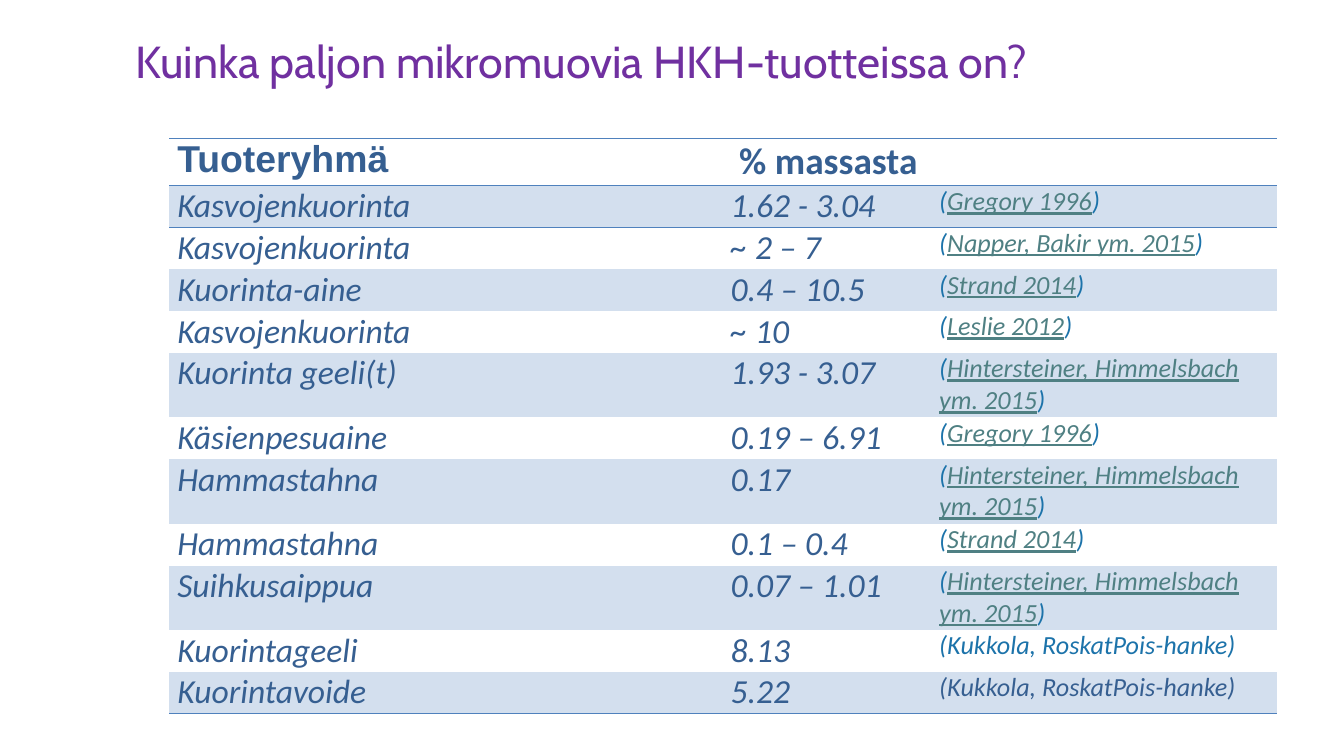
"""Build a slide with a table of microplastic content in cosmetic products."""
from dataclasses import dataclass

from lxml import etree
from pptx import Presentation
from pptx.dml.color import RGBColor
from pptx.enum.text import MSO_ANCHOR, MSO_AUTO_SIZE, PP_ALIGN
from pptx.oxml.ns import qn
from pptx.util import Cm, Pt

TOP = MSO_ANCHOR.TOP
LEFT = PP_ALIGN.LEFT
FIXED = MSO_AUTO_SIZE.NONE
NO_STYLE = "{2D5ABB26-0587-4C30-8999-92F81FD0307C}"


@dataclass(frozen=True)
class Theme:
    title: str = "7030A0"
    body: str = "365F91"
    bracket: str = "1C73AA"
    citation: str = "4F8083"
    band: str = "D3DFEE"
    rule: str = "4F81BD"
    title_size: int = 24
    header_size: int = 20
    body_size: int = 18
    source_size: int = 14
    title_font: str = "Cabin"
    header_font: str = "Arial"
    body_font: str = "Calibri"


THEME = Theme()


def write(paragraph, text, size=THEME.body_size, color=THEME.body,
          font=THEME.body_font, bold=False, italic=True, underline=False):
    run = paragraph.add_run()
    run.text = text
    run.font.size = Pt(size)
    run.font.name = font
    run.font.bold = bold
    run.font.italic = italic
    run.font.underline = underline
    run.font.color.rgb = RGBColor.from_string(color)


def draw_rules(cell, sides):
    properties = cell._tc.get_or_add_tcPr()
    for position, side in enumerate(sides):
        line = etree.Element(qn(f"a:ln{side}"), w=str(Pt(1)))
        fill = etree.SubElement(line, qn("a:solidFill"))
        etree.SubElement(fill, qn("a:srgbClr"), val=THEME.rule)
        properties.insert(position, line)


HINTERSTEINER = "Hintersteiner, Himmelsbach ym. 2015"
KUKKOLA = "(Kukkola, RoskatPois-hanke)"
PRODUCTS = [
    ("Kasvojenkuorinta", "1.62 - 3.04", "Gregory 1996"),
    ("Kasvojenkuorinta", "~ 2 – 7", "Napper, Bakir ym. 2015"),
    ("Kuorinta-aine", "0.4 – 10.5", "Strand 2014"),
    ("Kasvojenkuorinta", "~ 10", "Leslie 2012"),
    ("Kuorinta geeli(t)", "1.93 - 3.07", HINTERSTEINER),
    ("Käsienpesuaine", "0.19 – 6.91", "Gregory 1996"),
    ("Hammastahna", "0.17", HINTERSTEINER),
    ("Hammastahna", "0.1 – 0.4", "Strand 2014"),
    ("Suihkusaippua", "0.07 – 1.01", HINTERSTEINER),
    ("Kuorintageeli", "8.13", KUKKOLA),
    ("Kuorintavoide", "5.22", KUKKOLA),
]
COLUMN_WIDTHS = [10.46, 3.94, 6.53]
ROW_HEIGHTS = [0.89] + [1.22 if source == HINTERSTEINER else 0.79
                        for _, _, source in PRODUCTS]
LAST = len(PRODUCTS)

prs = Presentation()
prs.slide_width, prs.slide_height = Cm(25.4), Cm(14.29)
slide = prs.slides.add_slide(prs.slide_layouts[5])

title = slide.shapes.title
title.left, title.top, title.width, title.height = Cm(2.31), Cm(0.51), Cm(18.19), Cm(2.06)
heading = title.text_frame
heading.word_wrap = False
heading.auto_size = FIXED
heading.vertical_anchor = TOP
heading.paragraphs[0].alignment = LEFT
write(heading.paragraphs[0], "Kuinka paljon mikromuovia HKH-tuotteissa on?",
      size=THEME.title_size, color=THEME.title, font=THEME.title_font, italic=False)

table = slide.shapes.add_table(
    LAST + 1, len(COLUMN_WIDTHS), Cm(3.2), Cm(2.62),
    Cm(sum(COLUMN_WIDTHS)), Cm(sum(ROW_HEIGHTS))).table
table.first_row = table.horz_banding = False
table._tbl.tblPr.find(qn("a:tableStyleId")).text = NO_STYLE
for column, width in zip(table.columns, COLUMN_WIDTHS):
    column.width = Cm(width)

for number, (row, height) in enumerate(zip(table.rows, ROW_HEIGHTS)):
    row.height = Cm(height)
    for cell in row.cells:
        cell.margin_left = cell.margin_right = Cm(0.15)
        cell.margin_top = cell.margin_bottom = 0
        cell.vertical_anchor = TOP
        if number % 2:
            cell.fill.solid()
            cell.fill.fore_color.rgb = RGBColor.from_string(THEME.band)
        else:
            cell.fill.background()
        draw_rules(cell, {0: "TB", 1: "T", LAST: "B"}.get(number, ""))

for column, (label, font) in enumerate([("Tuoteryhmä", THEME.header_font),
                                        (" % massasta", THEME.body_font)]):
    write(table.cell(0, column).text_frame.paragraphs[0], label,
          size=THEME.header_size, font=font, bold=True, italic=False)

for number, (product, share, source) in enumerate(PRODUCTS, start=1):
    name_line, share_line, source_line = [
        cell.text_frame.paragraphs[0] for cell in table.rows[number].cells]
    write(name_line, product)
    write(share_line, share)
    if source == KUKKOLA:
        write(source_line, source, size=THEME.source_size,
              color=THEME.body if number == LAST else THEME.bracket)
    else:
        for text, color, underline in [("(", THEME.bracket, False),
                                       (source, THEME.citation, True),
                                       (")", THEME.bracket, False)]:
            write(source_line, text, size=THEME.source_size, color=color,
                  underline=underline)

prs.save("out.pptx")
